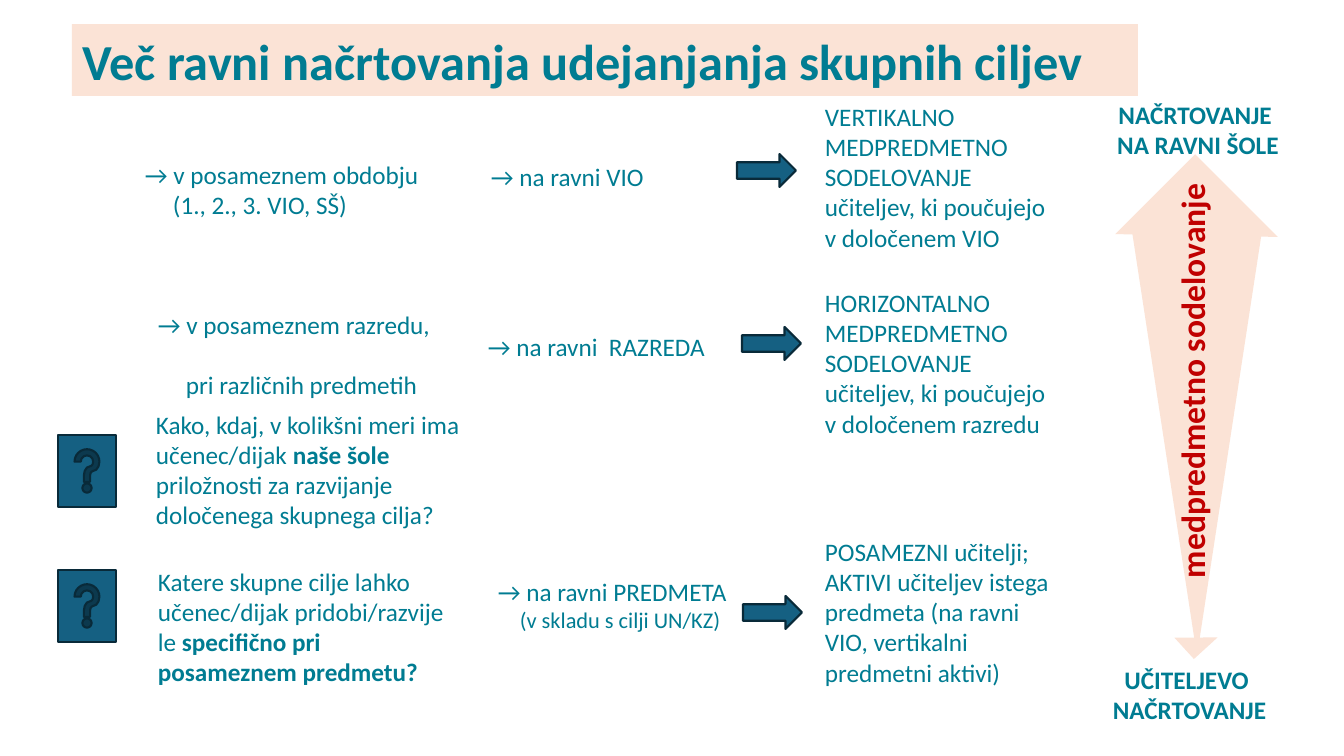
from dataclasses import dataclass

import pptx
import pptx.dml.color
import pptx.enum.shapes
import pptx.enum.text
import pptx.oxml
import pptx.util

PRESET = pptx.enum.shapes.MSO_SHAPE
ALIGN = pptx.enum.text.PP_ALIGN
EMU_PER_PX = 914400 / 100.8


@dataclass(frozen=True)
class Theme:
    font: str = "Calibri"
    teal: str = "007C92"
    peach: str = "FBE3D6"
    blue: str = "156082"
    navy: str = "092A39"
    red: str = "C00000"
    title: int = 36
    banner: int = 24
    body: int = 18
    small: int = 16
    border: float = 1.5


THEME = Theme()


def px(length):
    return pptx.util.Emu(round(length * EMU_PER_PX))


def rgb(color):
    return pptx.dml.color.RGBColor.from_string(color)


def style(run, size, color=THEME.teal, bold=False):
    run.font.name = THEME.font
    run.font.size = pptx.util.Pt(size)
    run.font.color.rgb = rgb(color)
    run.font.bold = bold


def write(paragraph, text, size=THEME.body, color=THEME.teal, bold=False):
    for index, piece in enumerate(text.split("**")):
        for line_index, line in enumerate(piece.split("\v")):
            if line_index:
                paragraph.add_line_break()
            if line:
                run = paragraph.add_run()
                run.text = line
                style(run, size, color, bold or index % 2 == 1)


def add_label(slide, box, *lines, align=ALIGN.LEFT, hanging=0, gap=0,
              sizes=(THEME.body, THEME.body), color=THEME.teal, bold=False):
    label = slide.shapes.add_textbox(*map(px, box))
    frame = label.text_frame
    frame.word_wrap = True
    for index, (line, size) in enumerate(zip(lines, sizes)):
        paragraph = frame.add_paragraph() if index else frame.paragraphs[0]
        paragraph.alignment = align
        if hanging:
            properties = paragraph._p.get_or_add_pPr()
            properties.set("marL", str(px(hanging)))
            properties.set("indent", str(0 if index else -px(hanging)))
        if index and gap:
            paragraph.space_before = px(gap)
        write(paragraph, line, size, color, bold)
    return label


def add_solid(slide, preset, box, fill, border=None, rotation=0):
    solid = slide.shapes.add_shape(preset, *map(px, box))
    solid.shadow.inherit = False
    solid.rotation = rotation
    solid.fill.solid()
    solid.fill.fore_color.rgb = rgb(fill)
    if border:
        solid.line.color.rgb = rgb(border)
        solid.line.width = pptx.util.Pt(THEME.border)
    else:
        solid.line.fill.background()


def add_title(slide, box, text):
    title = slide.shapes.title
    title.left, title.top, title.width, title.height = map(px, box)
    title.fill.solid()
    title.fill.fore_color.rgb = rgb(THEME.peach)
    frame = title.text_frame
    frame.text = text
    frame.auto_size = pptx.enum.text.MSO_AUTO_SIZE.NONE
    frame.vertical_anchor = pptx.enum.text.MSO_ANCHOR.MIDDLE
    frame.paragraphs[0].alignment = ALIGN.LEFT
    style(frame.paragraphs[0].runs[0], THEME.title, bold=True)


def outline_text(label):
    for run in label.text_frame.paragraphs[0].runs:
        run._r.get_or_add_rPr().insert(0, pptx.oxml.parse_xml(
            '<a:ln xmlns:a="http://schemas.openxmlformats.org/drawingml/2006/main" w="9525">'
            '<a:solidFill><a:srgbClr val="FFFFFF"/></a:solidFill></a:ln>'))


def add_cooperation_axis(slide):
    add_solid(slide, PRESET.ISOSCELES_TRIANGLE, (1132, 231, 130, 425), THEME.peach, rotation=180)
    add_solid(slide, PRESET.RIGHT_TRIANGLE, (1180, 623, 32, 29), THEME.peach, rotation=317.6)
    add_solid(slide, PRESET.RIGHT_TRIANGLE, (1140, 177, 113, 117), THEME.peach, rotation=135)
    add_label(slide, (1100, 94, 196, 72), "NAČRTOVANJE ", "NA RAVNI ŠOLE",
              align=ALIGN.CENTER, bold=True)
    add_label(slide, (1100, 659, 179, 72), "UČITELJEVO ", "NAČRTOVANJE",
              align=ALIGN.CENTER, bold=True)
    banner = add_label(slide, (943, 356, 497, 50), "medpredmetno sodelovanje",
                       align=ALIGN.CENTER, sizes=(THEME.banner,), color=THEME.red, bold=True)
    banner.rotation = 270
    outline_text(banner)


def main():
    deck = pptx.Presentation()
    deck.slide_width, deck.slide_height = px(1344), px(756)
    slide = deck.slides.add_slide(deck.slide_layouts[5])
    add_title(slide, (72, 24, 1066, 72), "Več ravni načrtovanja udejanjanja skupnih ciljev")

    add_label(slide, (135, 154, 327, 72), "→ v posameznem obdobju", "(1., 2., 3. VIO, SŠ)",
              hanging=28)
    add_label(slide, (148, 304, 296, 72), "→ v posameznem razredu,", "pri različnih predmetih",
              hanging=28, gap=30)
    add_label(slide, (146, 404, 333, 132),
              "Kako, kdaj, v kolikšni meri ima učenec/dijak **naše šole **"
              "priložnosti za razvijanje določenega skupnega cilja?")
    add_label(slide, (148, 561, 365, 132),
              "Katere skupne cilje lahko učenec/dijak pridobi/razvije \v"
              "le **specifično pri \vposameznem predmetu?**")

    add_label(slide, (481, 156, 311, 40), "→ na ravni VIO")
    add_label(slide, (478, 326, 259, 40), "→ na ravni  RAZREDA")
    add_label(slide, (488, 571, 270, 72), "→ na ravni PREDMETA", "(v skladu s cilji UN/KZ)",
              hanging=22, sizes=(THEME.body, THEME.small))

    cooperation = "{} MEDPREDMETNO SODELOVANJE \vučiteljev, ki poučujejo \vv določenem {}"
    for top, width, text in (
            (96, 288, cooperation.format("VERTIKALNO", "VIO")),
            (282, 288, cooperation.format("HORIZONTALNO", "razredu")),
            (531, 254, "POSAMEZNI učitelji; AKTIVI učiteljev istega predmeta "
                       "(na ravni VIO, vertikalni predmetni aktivi)")):
        add_label(slide, (815, top, width, 163), text)

    for left, top in ((737, 154), (742, 327), (743, 596)):
        add_solid(slide, PRESET.RIGHT_ARROW, (left, top, 59, 33), THEME.blue, THEME.navy)
    for top in (435, 570):
        add_solid(slide, PRESET.ACTION_BUTTON_HELP, (58, top, 58, 72), THEME.blue, THEME.navy)
    add_cooperation_axis(slide)
    deck.save("out.pptx")


if __name__ == "__main__":
    main()
